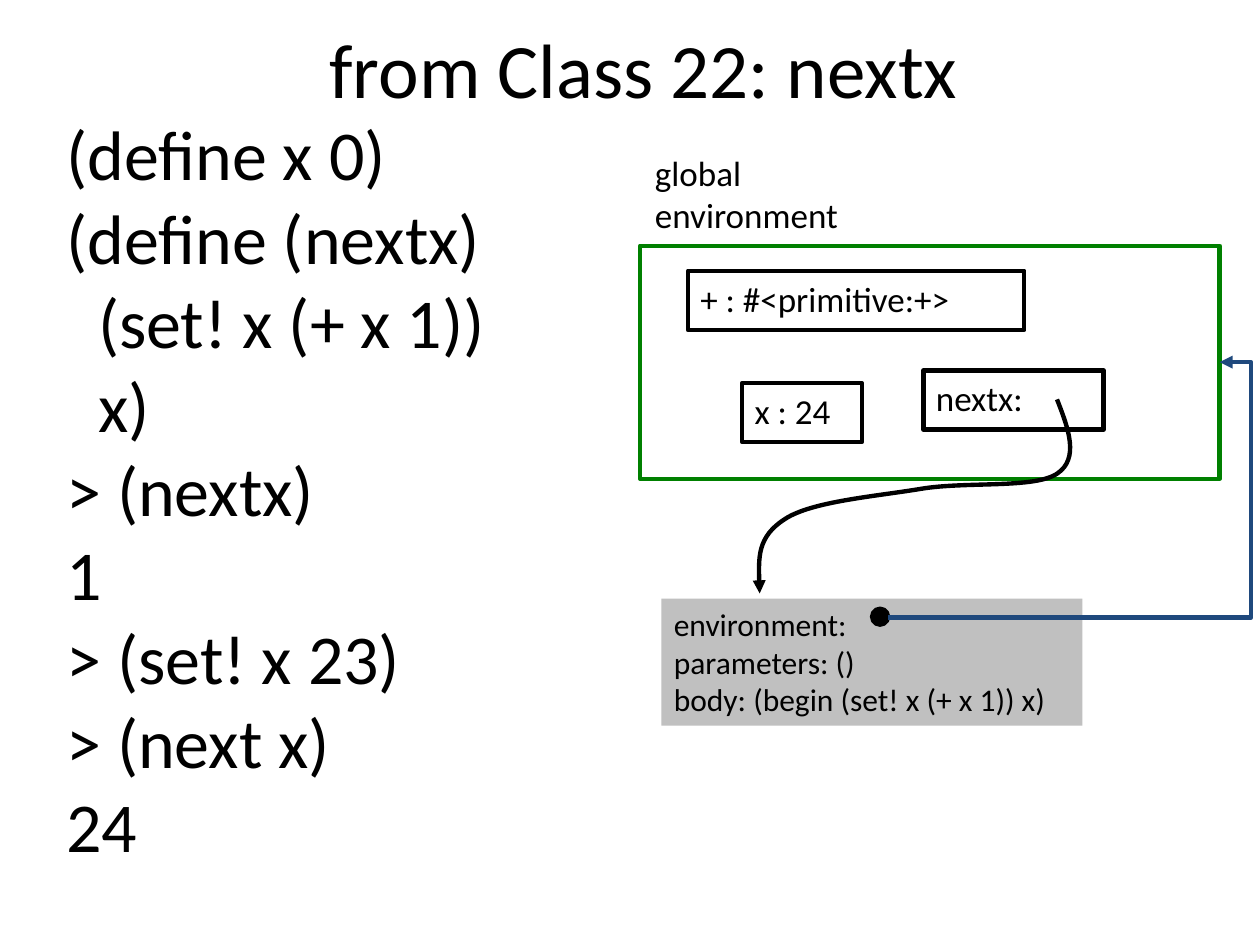
"""Builds the slide on the nextx procedure and its environment diagram."""
from lxml.etree import SubElement
from pptx import Presentation
from pptx.dml.color import RGBColor
from pptx.enum.shapes import MSO_CONNECTOR as Link, MSO_SHAPE as Shape
from pptx.enum.text import MSO_ANCHOR as Anchor, PP_ALIGN as Align
from pptx.oxml.ns import qn
from pptx.util import Inches, Pt

COLORS = {"ink": "000000", "frame": "008000", "procedure": "C0C0C0", "pointer": "1F497D"}
FONT = "Calibri"
LINE_WIDTH = 2.5


def color(name):
    """Return the named colour."""
    return RGBColor.from_string(COLORS[name])


def write(shape, text, size=20, align=Align.LEFT, anchor=Anchor.TOP, wrap=True, indents=()):
    """Write one paragraph per line, indenting the line numbers in indents."""
    frame = shape.text_frame
    frame.word_wrap = wrap
    frame.vertical_anchor = anchor
    for number, line in enumerate(text.split("\n")):
        paragraph = frame.paragraphs[0] if number == 0 else frame.add_paragraph()
        paragraph.text = line
        paragraph.alignment = align
        if number in indents:
            properties = paragraph._p.get_or_add_pPr()
            properties.set("marL", str(Inches(0.25)))
            properties.set("indent", "0")
        for run in paragraph.runs:
            run.font.name = FONT
            run.font.size = Pt(size)
            run.font.color.rgb = color("ink")


def add_label(slide, box, text, **style):
    """Add a text box."""
    label = slide.shapes.add_textbox(*map(Inches, box))
    write(label, text, **style)


def add_block(slide, box, kind=Shape.RECTANGLE, fill=None, line=None, width=LINE_WIDTH):
    """Add a flat shape with an optional fill and outline."""
    block = slide.shapes.add_shape(kind, *map(Inches, box))
    block.shadow.inherit = False
    if fill:
        block.fill.solid()
        block.fill.fore_color.rgb = color(fill)
    else:
        block.fill.background()
    if line:
        block.line.color.rgb = color(line)
        block.line.width = Pt(width)
    else:
        block.line.fill.background()
    return block


def style_arrow(arrow, line):
    """Colour an arrow, remove its shadow and add its head."""
    arrow.line.color.rgb = color(line)
    arrow.line.width = Pt(LINE_WIDTH)
    SubElement(arrow.line._get_or_add_ln(), qn("a:tailEnd"), type="triangle")
    SubElement(arrow._element.spPr, qn("a:effectLst"))


def add_curve(slide, points):
    """Draw an arrow through cubic curves, three points to each after the start."""
    start, *controls = [(Inches(x), Inches(y)) for x, y in points]
    builder = slide.shapes.build_freeform(*start)
    builder.add_line_segments(controls, close=False)
    curve = builder.convert_to_shape()
    curve.fill.background()
    outline = next(curve._element.iter(qn("a:path")))
    segments = outline.findall(qn("a:lnTo"))
    for first in range(0, len(segments), 3):
        bezier = SubElement(outline, qn("a:cubicBezTo"))
        for segment in segments[first:first + 3]:
            bezier.append(segment[0])
            outline.remove(segment)
    style_arrow(curve, "ink")


def add_environment(slide, left, top, width, height):
    """Draw the global environment with its bindings."""
    add_label(slide, (left + 0.02, top - 0.8, 1.74, 0.77), "global\nenvironment", wrap=False)
    add_block(slide, (left, top, width, height), line="frame")
    bindings = [
        ("+ : #<primitive:+>", 0.38, 0.2, 2.67),
        ("nextx:", 2.25, 0.99, 1.43),
        ("x : 24", 0.81, 1.09, 0.95),
    ]
    for text, x, y, binding_width in bindings:
        binding = add_block(slide, (left + x, top + y, binding_width, 0.47), line="ink")
        write(binding, text, wrap=False)


def add_procedure(slide, left, top, width, height):
    """Draw the procedure object and the dot where its environment pointer starts."""
    procedure = add_block(slide, (left, top, width, height), fill="procedure")
    text = "environment:\nparameters: ()\vbody: (begin (set! x (+ x 1)) x)"
    write(procedure, text, size=18, wrap=False)
    add_block(slide, (left + 1.67, top + 0.08, 0.13, 0.13), kind=Shape.OVAL,
              fill="ink", line="ink", width=2.25)


def add_pointers(slide, environment, procedure):
    """Join nextx to its procedure, and the procedure to its environment."""
    left, top, width, height = environment
    offsets = [(3.31, 1.22), (3.4, 1.45), (3.49, 1.69), (3.31, 1.81), (3.13, 1.93),
               (2.59, 1.87), (2.23, 1.93), (1.87, 1.99), (1.36, 2.03), (1.15, 2.17),
               (0.93, 2.31), (0.94, 2.54), (0.95, 2.76)]
    add_curve(slide, [(left + x, top + y) for x, y in offsets])
    pointer = slide.shapes.add_connector(
        Link.ELBOW, Inches(procedure[0] + 1.8), Inches(procedure[1] + 0.15),
        Inches(left + width), Inches(top + height / 2))
    adjustments = next(pointer._element.iter(qn("a:avLst")))
    SubElement(adjustments, qn("a:gd"), name="adj1", fmla="val 109500")
    style_arrow(pointer, "pointer")


def add_code(slide, box):
    """Write the definitions and the session that uses them."""
    code = ("(define x 0)\n(define (nextx)\n(set! x (+ x 1))\nx)\n"
            "> (nextx)\n1\n> (set! x 23)\n> (next x)\n24")
    add_label(slide, box, code, size=40, indents=(2, 3))


def main():
    """Build and save the slide."""
    deck = Presentation()
    deck.slide_width, deck.slide_height = Inches(10), Inches(7.5)
    slide = deck.slides.add_slide(deck.slide_layouts[6])
    environment = (5.08, 1.95, 4.6, 1.85)
    procedure = (5.25, 4.75, 3.34, 1.01)
    add_label(slide, (0.61, 0.08, 9, 0.92), "from Class 22: nextx", size=44,
              align=Align.CENTER, anchor=Anchor.MIDDLE)
    add_code(slide, (0.43, 0.83, 5.3, 6.1))
    add_environment(slide, *environment)
    add_procedure(slide, *procedure)
    add_pointers(slide, environment, procedure)
    deck.save("out.pptx")


if __name__ == "__main__":
    main()
